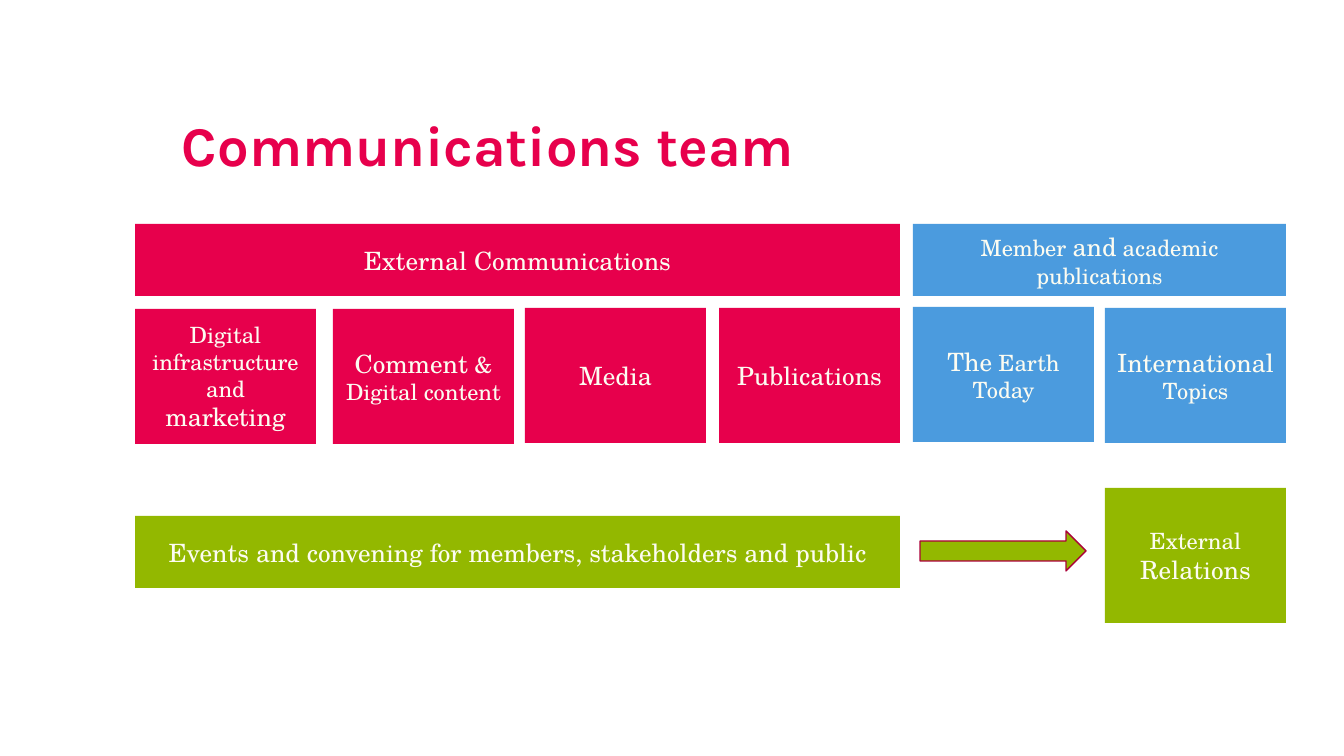
from pptx import Presentation
from pptx.dml.color import RGBColor
from pptx.enum.shapes import MSO_SHAPE
from pptx.enum.text import MSO_ANCHOR, PP_ALIGN
from pptx.util import Pt

RECT, ARROW = MSO_SHAPE.RECTANGLE, MSO_SHAPE.RIGHT_ARROW
MIDDLE, CENTER = MSO_ANCHOR.MIDDLE, PP_ALIGN.CENTER
PX = 914400 / 100.8

COLORS = {"red": "E7004C", "blue": "4B9BDE", "green": "93B800",
          "edge": "AB0038", "text": "FCFCF1"}
TITLE = "Communications team"

# Each label is a list of (text, size in points)
BARS = [
    ("red", 135, 224, 765, [("External Communications", 18)]),
    ("blue", 913, 224, 373,
     [("Member ", 16), ("and", 18), (" academic publications", 16)]),
    ("green", 135, 516, 765,
     [("Events and convening for members, stakeholders and public", 18)]),
]
CARDS = [
    ("red", 135, 309, [("Digital infrastructure and ", 16), ("marketing", 18)]),
    ("red", 333, 309, [("Comment", 18), (" & Digital content", 16)]),
    ("red", 525, 308, [("Media", 18)]),
    ("red", 719, 308, [("Publications", 18)]),
    ("blue", 913, 307, [("The", 18), (" Earth Today", 16)]),
    ("blue", 1105, 308, [("International", 18), (" Topics", 16)]),
    ("green", 1105, 488, [("External ", 16), ("Relations", 18)]),
]
BAR_H = 72
CARD_W, CARD_H = 181, 135


def px(*vals):
    return [round(v * PX) for v in vals]


def rgb(name):
    return RGBColor.from_string(COLORS[name])


def style(run, size, font, color):
    run.font.size = Pt(size)
    run.font.name = font
    run.font.color.rgb = rgb(color)


def add_block(slide, kind, color, box):
    shape = slide.shapes.add_shape(kind, *px(*box))
    shape.shadow.inherit = False
    shape.fill.solid()
    shape.fill.fore_color.rgb = rgb(color)
    shape.line.fill.background()
    return shape


def add_label(slide, color, box, parts):
    frame = add_block(slide, RECT, color, box).text_frame
    frame.word_wrap = True
    frame.vertical_anchor = MIDDLE
    para = frame.paragraphs[0]
    para.alignment = CENTER
    for text, size in parts:
        run = para.add_run()
        run.text = text
        style(run, size, "TeX Gyre Schola", "text")


def add_title(slide):
    frame = slide.shapes.add_textbox(*px(182, 118, 1072, 72)).text_frame
    frame.word_wrap = True
    frame.margin_left = frame.margin_right = 0
    frame.margin_top = frame.margin_bottom = 0
    frame.text = TITLE
    para = frame.paragraphs[0]
    para.line_spacing = 0.9
    style(para.runs[0], 40, "Karla", "red")
    para.runs[0].font.bold = True


def main():
    prs = Presentation()
    prs.slide_width, prs.slide_height = px(1344, 756)
    slide = prs.slides.add_slide(prs.slide_layouts[6])
    add_title(slide)
    for color, x, y, w, parts in BARS:
        add_label(slide, color, (x, y, w, BAR_H), parts)
    for color, x, y, parts in CARDS:
        add_label(slide, color, (x, y, CARD_W, CARD_H), parts)
    arrow = add_block(slide, ARROW, "green", (920, 531, 166, 40))
    arrow.line.color.rgb = rgb("edge")
    arrow.line.width = Pt(1)
    prs.save("out.pptx")


if __name__ == "__main__":
    main()
